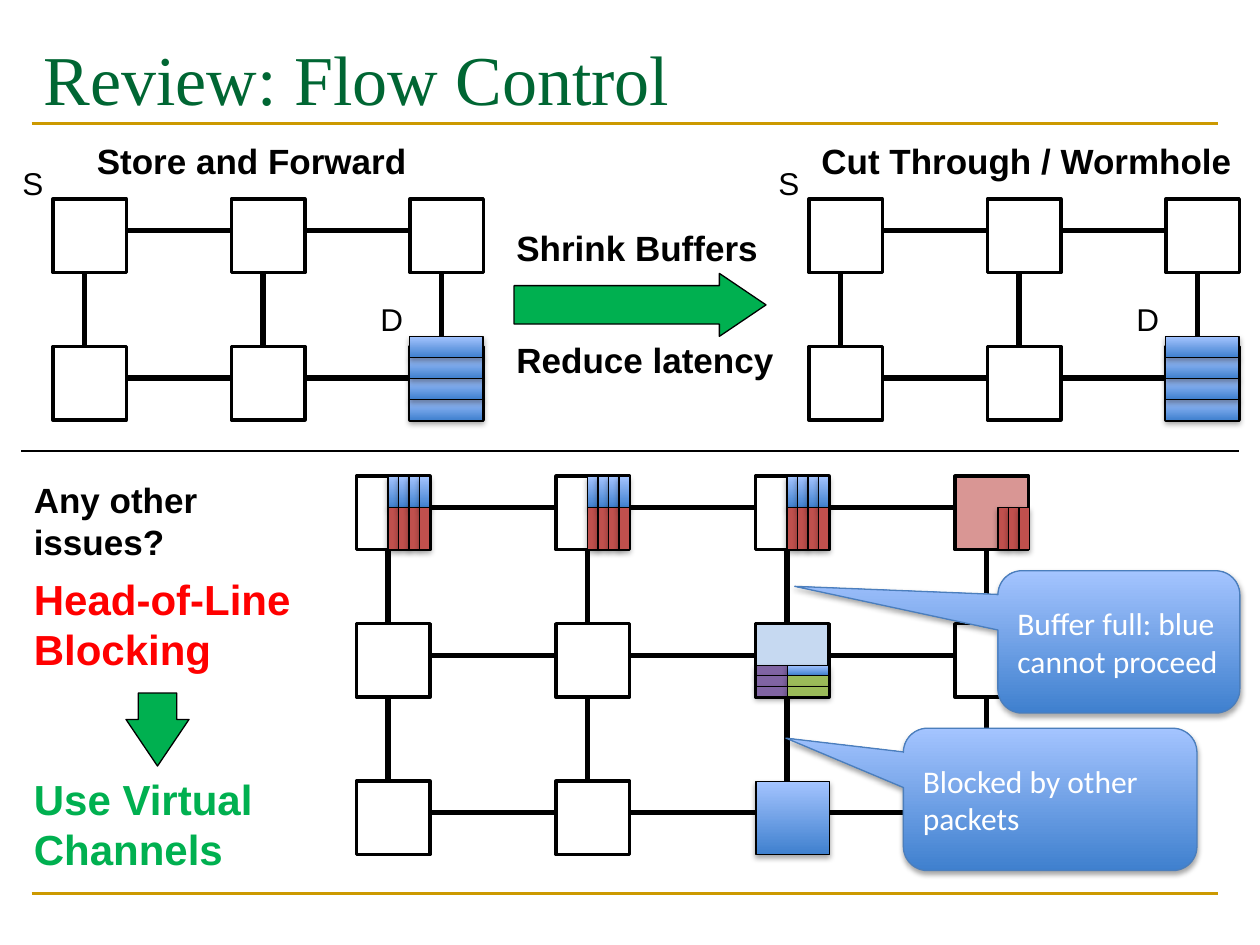
"""Build the flow control review slide."""
from lxml import etree
from pptx import Presentation, util as u
from pptx.dml.color import RGBColor
from pptx.enum import shapes as s, text as t
from pptx.oxml.ns import qn

HUES = {"black": "000000", "white": "FFFFFF", "gold": "CC9900", "pine": "006633",
        "green": "00B050", "alert": "FF0000", "red": "C0504D", "lime": "9BBB59",
        "plum": "8064A2", "pale": "C6D9F1", "pink": "D99694", "edge": "4B7EBC",
        "deep": "3F80CE", "sky": "A4C4FF"}
HUES = {name: RGBColor.from_string(code) for name, code in HUES.items()}
KIND = s.MSO_SHAPE
SIDE, FLIT = 7 / 12, 1 / 12

deck = Presentation()
deck.slide_width, deck.slide_height = u.Inches(10), u.Inches(7.5)
slide = deck.slides.add_slide(deck.slide_layouts[6])


def box(x, y, w, h, fill=None, width=0.75, edge="black", kind=KIND.RECTANGLE, shade=True):
    item = slide.shapes.add_shape(kind, *map(u.Inches, (x, y, w, h)))
    item.line.color.rgb, item.line.width = HUES[edge], u.Pt(width)
    item.shadow.inherit = False
    if fill is None:
        item.fill.background()
    elif fill == "blue":
        item.fill.gradient()
        item.fill.gradient_angle = 90
        for stop, hue in zip(item.fill.gradient_stops, ("deep", "sky")):
            stop.color.rgb = HUES[hue]
    else:
        item.fill.solid()
        item.fill.fore_color.rgb = HUES[fill]
    if fill and shade:
        glow = etree.SubElement(item._element.spPr.find(qn("a:effectLst")), qn("a:outerShdw"),
                                blurRad="40000", dist="23000", dir="5400000", rotWithShape="0")
        tint = etree.SubElement(glow, qn("a:srgbClr"), val="000000")
        etree.SubElement(tint, qn("a:alpha"), val="35000")
    return item


def write(item, words, size, hue, bold=False, font="Arial", gap=0):
    frame = item.text_frame
    frame.word_wrap = True
    frame.text = words
    for spot, para in enumerate(frame.paragraphs):
        para.alignment = t.PP_ALIGN.LEFT
        para.space_before = u.Pt(gap if spot else 0)
        para.font.name, para.font.size = font, u.Pt(size)
        para.font.bold, para.font.color.rgb = bold, HUES[hue]


lines = [(0.25, y, 9.67, y, "gold", 1.5) for y in (0.98, 7.09)]
lines.append((0.17, 3.58, 9.83, 3.58, "black", 0.75))
nodes = []
grids = [(0.42, 17 / 12, 3, (1.58, 2.75)),
         (6.42, 17 / 12, 3, (1.58, 2.75)),
         (2.83, 19 / 12, 4, (3.78, 4.95, 6.2))]
for left, step, count, rows in grids:
    cols = [left + step * col for col in range(count)]
    nodes += [(x, y) for y in rows for x in cols]
    for y in rows:
        lines += [(a + SIDE, y + 0.25, b, y + 0.25, "black", 3) for a, b in zip(cols, cols[1:])]
    for a, b in zip(rows, rows[1:]):
        lines += [(x + 0.25, a + SIDE, x + 0.25, b, "black", 3) for x in cols]

for *ends, hue, width in lines:
    line = slide.shapes.add_connector(s.MSO_CONNECTOR.STRAIGHT, *map(u.Inches, ends))
    line.line.color.rgb, line.line.width = HUES[hue], u.Pt(width)
    etree.SubElement(line._element.spPr, qn("a:effectLst"))

fills = {(6, 4.95): "pale", (7.58, 3.78): "pink"}
for x, y in nodes:
    spot = (round(x, 2), y)
    if spot != (6, 6.2):
        box(x, y, SIDE, SIDE, fills.get(spot), 2, shade=False)
box(6, 6.2, SIDE, SIDE, "blue")

for x in (3.25, 9.25):
    for row in range(4):
        box(x, 3.17 - row / 6, SIDE, 1 / 6, "blue")
for node in range(3):
    for flit in range(4):
        x = 3.08 + node * 19 / 12 + flit * FLIT
        box(x, 3.78, FLIT, 0.25, "blue")
        box(x, 4.03, FLIT, 0.33, "red")
for flit in range(3):
    box(7.92 + flit * FLIT, 4.03, FLIT, 0.33, "red")
for row, hue in enumerate(("blue", "lime", "lime")):
    y = 5.28 + row * FLIT
    box(6, y, 0.25, FLIT, "plum")
    box(6.25, y, 0.33, FLIT, hue)

for x, y, w, h, turn in ((4.08, 2.17, 2, 0.5, 0), (0.96, 5.54, 0.58, 0.5, 90)):
    arrow = box(x, y, w, h, "green", kind=KIND.RIGHT_ARROW, shade=False)
    arrow.adjustments[0], arrow.adjustments[1] = 0.61, 0.74
    arrow.rotation = turn

calls = [(7.17, 5.78, 2.33, (-0.9, -0.43, 0.17), "Blocked by other packets"),
         (7.92, 4.53, 1.92, (-1.34, -0.39, 0.17), "Buffer full: blue cannot proceed")]
for x, y, w, shape, words in calls:
    call = box(x, y, w, 1.13, "blue", edge="edge", kind=KIND.ROUNDED_RECTANGULAR_CALLOUT)
    for spot, value in enumerate(shape):
        call.adjustments[spot] = value
    call.text_frame.vertical_anchor = t.MSO_ANCHOR.MIDDLE
    write(call, words, 18, "white", font="Calibri")

notes = [(0.25, 0.23, 9.42, 0.75, "Review: Flow Control", 40, "pine", False, "Times New Roman"),
         (0.67, 1.06, 2.83, 0.44, "Store and Forward", 20, "black", True),
         (6.42, 1.06, 3.55, 0.44, "Cut Through / Wormhole", 20, "black", True),
         (4, 1.75, 2.83, 1.31, "Shrink Buffers\nReduce latency", 20, "black", True, "Arial", 40),
         (0.17, 3.75, 2.17, 0.75, "Any other issues?", 20, "black", True),
         (0.17, 4.5, 2.25, 0.91, "Head-of-Line\nBlocking", 24, "alert", True),
         (0.17, 6.09, 2.25, 0.91, "Use Virtual\nChannels", 24, "green", True)]
for x in (0.08, 6.08):
    notes.append((x, 1.25, 0.75, 0.4, "S", 18, "black"))
    notes.append((x + 2.84, 2.33, 0.75, 0.4, "D", 18, "black"))
for x, y, w, h, *style in notes:
    write(slide.shapes.add_textbox(*map(u.Inches, (x, y, w, h))), *style)

deck.save("out.pptx")
